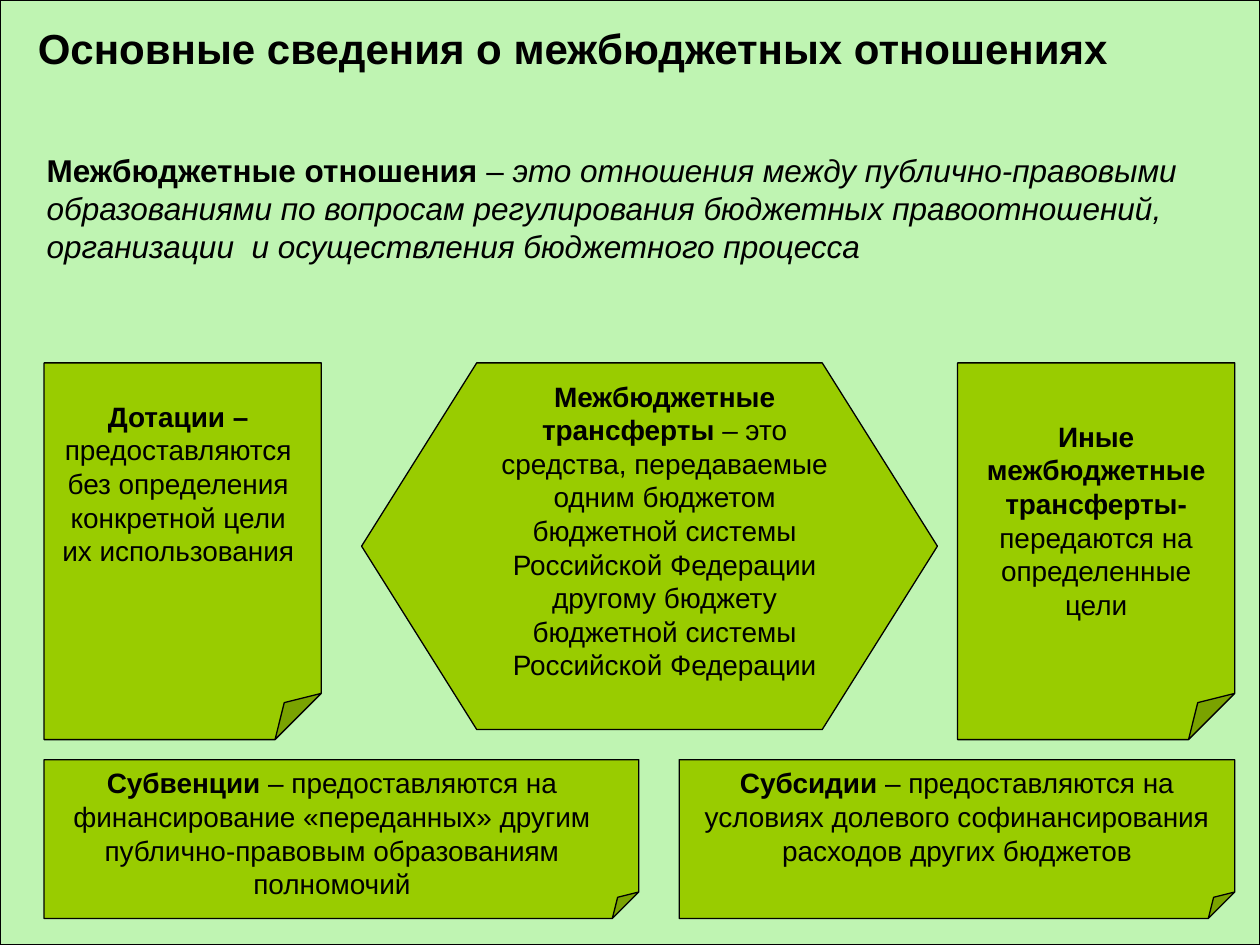
from pptx import Presentation
from pptx.dml.color import RGBColor
from pptx.enum.shapes import MSO_SHAPE as Shape
from pptx.enum.text import MSO_ANCHOR, MSO_AUTO_SIZE, PP_ALIGN
from pptx.util import Inches, Pt

COLORS = {"page": "C6E7FC", "panel": "BFF4B2", "card": "99CC00", "ink": "000000"}
FONT = "Arial"
LEFT, RIGHT = 0.35, 9.8
TOP_ROW, BOTTOM_ROW = 2.88, 6.03
NOTE_W, NOTE_H, BOTTOM_H = 2.2, 2.99, 1.26


def color(name):
    return RGBColor.from_string(COLORS[name])


def place(shape, box):
    shape.left, shape.top, shape.width, shape.height = map(Inches, box)


def write(frame, pieces, size, align=PP_ALIGN.LEFT):
    """Fill a frame with one paragraph of (text, bold, italic) pieces."""
    frame.word_wrap = True
    frame.auto_size = MSO_AUTO_SIZE.NONE
    frame.vertical_anchor = MSO_ANCHOR.TOP
    paragraph = frame.paragraphs[0]
    paragraph.alignment = align
    paragraph.space_before = Pt(0)
    for text, bold, italic in pieces:
        run = paragraph.add_run()
        run.text = text
        font = run.font
        font.name, font.size = FONT, Pt(size)
        font.bold, font.italic = bold, italic
        font.color.rgb = color("ink")


def add_outlined(slide, kind, box, fill):
    shape = slide.shapes.add_shape(kind, *map(Inches, box))
    shape.shadow.inherit = False
    shape.fill.solid()
    shape.fill.fore_color.rgb = color(fill)
    shape.line.color.rgb = color("ink")
    shape.line.width = Pt(0.75)
    return shape


def add_background(slide):
    slide.background.fill.solid()
    slide.background.fill.fore_color.rgb = color("page")
    panel = add_outlined(slide, Shape.RECTANGLE, (0, 0, 10, 7.5), "panel")
    slide.shapes._spTree.insert(2, panel._element)  # behind the placeholders


def add_heading(slide, box):
    title = slide.shapes.title
    place(title, box)
    write(title.text_frame, [("Основные сведения о межбюджетных отношениях", True, False)], 24)


def add_definition(slide, box):
    body = slide.placeholders[1]
    place(body, box)
    write(body.text_frame, [
        ("Межбюджетные отношения", True, False),
        (" – ", False, False),
        ("это отношения между публично-правовыми образованиями по вопросам "
         "регулирования бюджетных правоотношений, организации  и осуществления "
         "бюджетного процесса", False, True),
    ], 18)
    properties = body.text_frame.paragraphs[0]._p.get_or_add_pPr()
    properties.set("marL", "0")
    properties.set("indent", "0")
    bullet_off = properties.makeelement(
        "{http://schemas.openxmlformats.org/drawingml/2006/main}buNone", {})
    properties.append(bullet_off)


def add_card(slide, kind, box, caption_box, term, meaning):
    """Draw a card; caption_box is (dx, dy, width, height) from its corner."""
    left, top = box[:2]
    dx, dy, width, height = caption_box
    add_outlined(slide, kind, box, "card")
    caption = slide.shapes.add_textbox(
        *map(Inches, (left + dx, top + dy, width, height)))
    write(caption.text_frame, [(term, True, False), (meaning, False, False)],
          16, PP_ALIGN.CENTER)


def add_transfers(slide):
    note, hexagon = Shape.FOLDED_CORNER, Shape.FLOWCHART_PREPARATION
    cards = [
        (note, (LEFT, TOP_ROW, NOTE_W, NOTE_H), (0, 0.24, 2.13, 1.44),
         "Дотации –", " предоставляются без определения конкретной цели их использования"),
        (hexagon, (2.87, TOP_ROW, 4.57, 2.91), (0.87, 0.08, 3.07, 2.51),
         "Межбюджетные трансферты",
         " – это средства, передаваемые одним бюджетом бюджетной системы Российской "
         "Федерации другому бюджету бюджетной системы Российской Федерации"),
        (note, (RIGHT - NOTE_W, TOP_ROW, NOTE_W, NOTE_H), (0, 0.4, 2.2, 1.7),
         "Иные межбюджетные трансферты-", " передаются на определенные цели"),
        (note, (LEFT, BOTTOM_ROW, 4.72, BOTTOM_H), (0, 0, 4.57, 1.17),
         "Субвенции", " – предоставляются на финансирование «переданных» другим "
         "публично-правовым образованиям полномочий"),
        (note, (5.39, BOTTOM_ROW, RIGHT - 5.39, BOTTOM_H), (0.08, 0, 4.25, 0.9),
         "Субсидии", " – предоставляются на условиях долевого софинансирования "
         "расходов других бюджетов"),
    ]
    for kind, box, caption_box, term, meaning in cards:
        if kind == note:
            add_card(slide, kind, box, caption_box, term, meaning)
        else:
            add_card(slide, hexagon, box, caption_box, term, meaning)


def main():
    deck = Presentation()
    deck.slide_width, deck.slide_height = Inches(10), Inches(7.5)
    slide = deck.slides.add_slide(deck.slide_layouts[1])
    add_background(slide)
    add_heading(slide, (0.2, 0.13, 9.53, 0.5))
    add_definition(slide, (0.27, 1.15, 9.53, 1))
    add_transfers(slide)
    deck.save("out.pptx")


if __name__ == "__main__":
    main()
